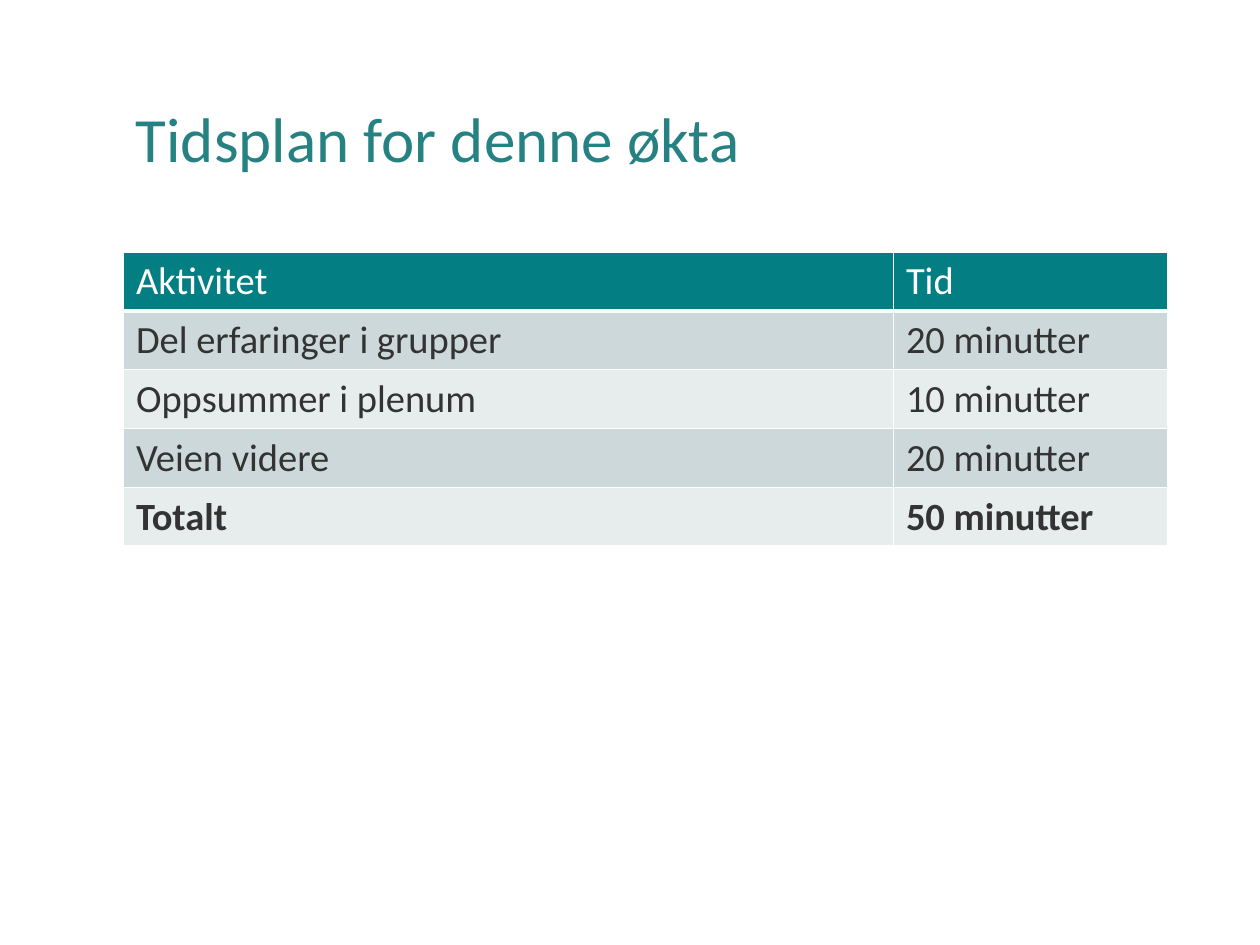
from dataclasses import dataclass

from lxml import etree
from pptx import Presentation
from pptx.dml.color import RGBColor
from pptx.enum import text as tx
from pptx.oxml import ns
from pptx.util import Cm, Pt

FONT = "Calibri"
WHITE, TEAL, DARK = "FFFFFF", "037F83", "333333"
BANDS = ("CCD8D9", "E7ECED")
LEFT, WIDTH = 2.49, 21.06
COLS = (15.52, 5.54)
ROW = 1.18


@dataclass
class Entry:
    task: str
    time: str
    bold: bool = False


HEAD = Entry("Aktivitet", "Tid")
PLAN = [
    Entry("Del erfaringer i grupper", "20 minutter"),
    Entry("Oppsummer i plenum", "10 minutter"),
    Entry("Veien videre", "20 minutter"),
    Entry("Totalt", "50 minutter", bold=True),
]


def color(code: str) -> RGBColor:
    return RGBColor.from_string(code)


def write(frame, words: str, *, size: float, ink: str,
          bold: bool = False, space: float = 1.0) -> None:
    para = frame.paragraphs[0]
    para.line_spacing = space
    run = para.add_run()
    run.text = words
    font = run.font
    font.name, font.size, font.bold = FONT, Pt(size), bold
    font.color.rgb = color(ink)


def border(cell, side: str, width: float) -> None:
    line = etree.SubElement(cell._tc.get_or_add_tcPr(), ns.qn(f"a:ln{side}"),
                            w=str(Pt(width)))
    fill = etree.SubElement(line, ns.qn("a:solidFill"))
    etree.SubElement(fill, ns.qn("a:srgbClr"), val=WHITE)


def draw_row(table, row: int, entry: Entry) -> None:
    head = row == 0
    table.rows[row].height = Cm(ROW)
    # The rule between the header and the body is thicker
    widths = {"L": 1, "R": 1, "T": 3 if row == 1 else 1, "B": 3 if head else 1}
    for col, words in enumerate((entry.task, entry.time)):
        cell = table.cell(row, col)
        for side, width in widths.items():
            border(cell, side, width)
        cell.fill.solid()
        cell.fill.fore_color.rgb = color(TEAL if head else BANDS[(row - 1) % 2])
        write(cell.text_frame, words, size=22, ink=WHITE if head else DARK,
              bold=entry.bold)


def main() -> None:
    deck = Presentation()
    deck.slide_width, deck.slide_height = Cm(25.4), Cm(19.05)
    slide = deck.slides.add_slide(deck.slide_layouts[6])

    # Title
    box = slide.shapes.add_textbox(Cm(LEFT), Cm(1.02), Cm(WIDTH), Cm(3.68))
    frame = box.text_frame
    frame.word_wrap = True
    frame.vertical_anchor = tx.MSO_ANCHOR.MIDDLE
    write(frame, "Tidsplan for denne økta", size=36, ink="268183", space=0.9)

    # Timetable
    rows = [HEAD, *PLAN]
    table = slide.shapes.add_table(len(rows), len(COLS), Cm(LEFT), Cm(5.08),
                                   Cm(WIDTH), Cm(ROW * len(rows))).table
    for col, width in zip(table.columns, COLS):
        col.width = Cm(width)
    for row, entry in enumerate(rows):
        draw_row(table, row, entry)

    deck.save("out.pptx")


if __name__ == "__main__":
    main()
